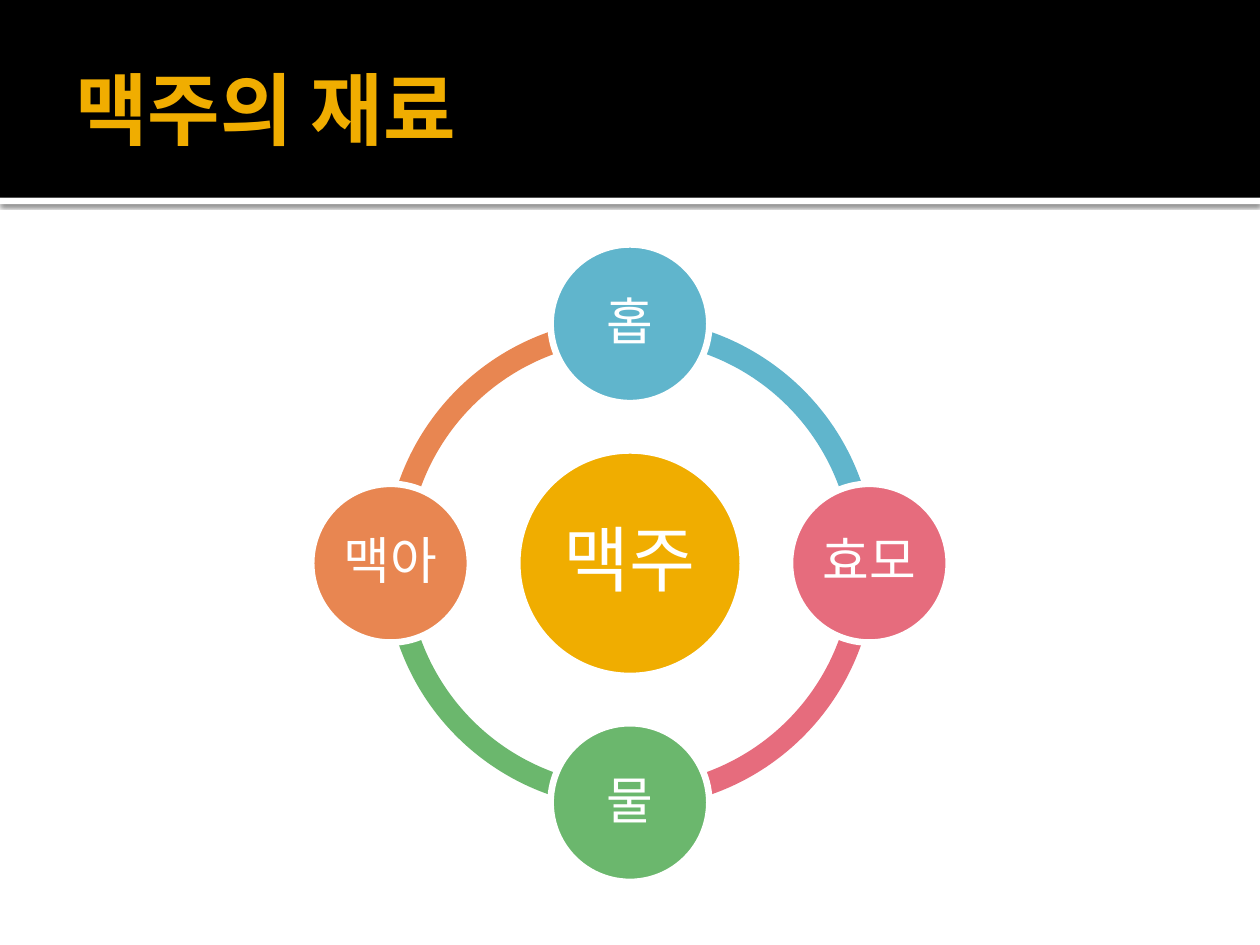
from dataclasses import dataclass
from math import cos, radians, sin

from lxml.etree import SubElement
from pptx import Presentation
from pptx.dml.color import RGBColor
from pptx.enum.shapes import MSO_SHAPE as Shape
from pptx.enum.text import MSO_ANCHOR as Anchor, PP_ALIGN as Align
from pptx.oxml.ns import qn
from pptx.util import Inches, Pt


@dataclass(frozen=True)
class Theme:
    """Colours, font and type sizes of the slide."""
    black: str = "000000"
    white: str = "FFFFFF"
    gold: str = "F0AD00"
    blue: str = "60B5CC"
    pink: str = "E66C7D"
    green: str = "6BB76D"
    orange: str = "E88651"
    font: str = "Cabin"
    title: int = 45
    hub: int = 41
    node: int = 29
    outline: float = 3.78


T = Theme()
CENTER = (5, 4.47)
ORBIT = 1.9
ARC_SIZE = 3.89
ARC_WIDTH = 0.046
HUB_SIZE = 1.79
NODE_SIZE = 1.26
NODES = [("홉", T.blue), ("효모", T.pink), ("물", T.green), ("맥아", T.orange)]


def add_shape(s, kind, box, fill):
    """Add a filled preset shape without outline or shadow."""
    sp = s.shapes.add_shape(kind, *map(Inches, box))
    sp.shadow.inherit = False
    sp.fill.solid()
    sp.fill.fore_color.rgb = RGBColor.from_string(fill)
    sp.line.fill.background()
    return sp


def square(x, y, size):
    """Return the box of a square centred on a point."""
    return x - size / 2, y - size / 2, size, size


def write(tf, text, color, frame, para, font):
    """Write one formatted paragraph into a text frame."""
    p = tf.paragraphs[0]
    r = p.add_run()
    r.text = text
    r.font.color.rgb = RGBColor.from_string(color)
    for target, values in ((tf, frame), (p, para), (r.font, font)):
        for name, value in values.items():
            setattr(target, name, value)


def add_shadow(sp, color, alpha, blur, dist):
    """Give a shape a soft shadow that falls downwards."""
    effects = sp._element.spPr.find(qn("a:effectLst"))
    shadow = SubElement(effects, qn("a:outerShdw"), blurRad=str(Pt(blur)),
                        dist=str(Pt(dist)), dir="5400000", algn="tl", rotWithShape="0")
    rgb = SubElement(shadow, qn("a:srgbClr"), val=color)
    SubElement(rgb, qn("a:alpha"), val=str(alpha * 1000))


def add_header(s, text):
    """Add the black band, its white edge and the title."""
    edge = add_shape(s, Shape.RECTANGLE, (0, 1.57, 10, 0.05), T.white)
    add_shadow(edge, T.black, 60, 2.5, 0.8)
    add_shape(s, Shape.RECTANGLE, (0, 0, 10, 1.57), T.black)
    tf = s.shapes.add_textbox(*map(Inches, (0.5, 0.17, 9, 1.37))).text_frame
    frame = {"word_wrap": True, "vertical_anchor": Anchor.MIDDLE,
             "margin_left": Inches(0.1), "margin_right": Inches(0.05)}
    write(tf, text, T.gold, frame, {"alignment": Align.LEFT},
          {"name": T.font, "size": Pt(T.title), "bold": True})


def add_arc(s, start, color):
    """Add a quarter of the ring, clockwise from a start angle."""
    sp = add_shape(s, Shape.BLOCK_ARC, square(*CENTER, ARC_SIZE), color)
    angles = [a % 360 * 0.6 for a in (start, start + 90)]
    for i, value in enumerate((*angles, ARC_WIDTH)):
        sp.adjustments[i] = value


def add_circle(s, x, y, size, text, color, points):
    """Add a white-edged circle with a centred label."""
    sp = add_shape(s, Shape.OVAL, square(x, y, size), color)
    sp.line.color.rgb = RGBColor.from_string(T.white)
    sp.line.width = Pt(T.outline)
    frame = {"word_wrap": False, "vertical_anchor": Anchor.MIDDLE}
    frame.update({f"margin_{side}": Inches(0.04)
                  for side in ("left", "top", "right", "bottom")})
    write(sp.text_frame, text, T.white, frame,
          {"alignment": Align.CENTER, "line_spacing": 0.9},
          {"name": T.font, "size": Pt(points)})


def add_cycle(s):
    """Add the ring, the hub and the nodes around it."""
    cx, cy = CENTER
    nodes = [(270 + 90 * i, *node) for i, node in enumerate(NODES)]
    for angle, _, color in reversed(nodes):
        add_arc(s, angle, color)
    add_circle(s, cx, cy, HUB_SIZE, "맥주", T.gold, T.hub)
    for angle, text, color in nodes:
        x = cx + ORBIT * cos(radians(angle))
        y = cy + ORBIT * sin(radians(angle))
        add_circle(s, x, y, NODE_SIZE, text, color, T.node)


def main():
    """Build and save the slide."""
    prs = Presentation()
    prs.slide_width, prs.slide_height = Inches(10), Inches(7.5)
    s = prs.slides.add_slide(prs.slide_layouts[6])
    add_header(s, "맥주의 재료")
    add_cycle(s)
    prs.save("out.pptx")


if __name__ == "__main__":
    main()
